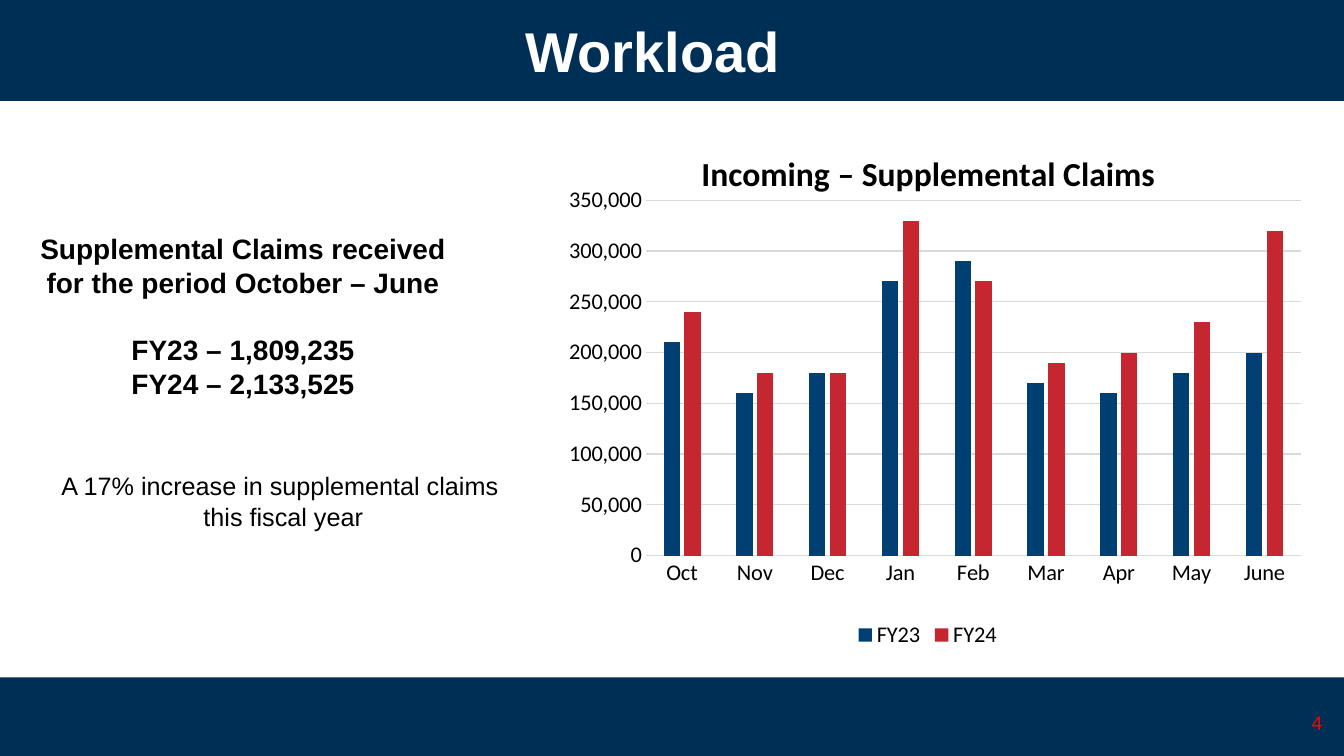
from lxml import etree
from pptx import Presentation
from pptx import util as u
from pptx.chart import data as chart_data
from pptx.dml.color import RGBColor
from pptx.enum import chart as chart_enum, shapes, text
from pptx.oxml import parse_xml
from pptx.oxml.ns import nsdecls, qn

NAVY = RGBColor(0x00, 0x2F, 0x56)
BLUE = RGBColor(0x00, 0x3F, 0x72)
CRIMSON = RGBColor(0xC6, 0x26, 0x30)
RED = RGBColor(0xFF, 0x00, 0x00)
GRAY = RGBColor(0xD9, 0xD9, 0xD9)
BLACK = RGBColor(0x00, 0x00, 0x00)
WHITE = RGBColor(0xFF, 0xFF, 0xFF)

MONTHS = ["Oct", "Nov", "Dec", "Jan", "Feb", "Mar", "Apr", "May", "June"]
CLAIMS = {
    "FY23": (BLUE, [210000, 160000, 180000, 270000, 290000, 170000, 160000, 180000, 200000]),
    "FY24": (CRIMSON, [240000, 180000, 180000, 330000, 270000, 190000, 200000, 230000, 320000]),
}


def inches(box):
    return [u.Inches(value) for value in box]


def format_font(font, color, **values):
    for name, value in values.items():
        setattr(font, name, value)
    font.color.rgb = color


def add_text(slide, box, lines, color, alignment=None, gaps=None, **values):
    """Write one paragraph per line; gaps maps a line index to its space before."""
    frame = slide.shapes.add_textbox(*inches(box)).text_frame
    frame.word_wrap = True
    for index, line in enumerate(lines):
        paragraph = frame.paragraphs[0] if index == 0 else frame.add_paragraph()
        paragraph.text = line
        paragraph.alignment = alignment
        if gaps and index in gaps:
            paragraph.space_before = u.Pt(gaps[index])
        format_font(paragraph.font, color, **values)


def add_title(slide, box):
    title = slide.shapes.title
    title.left, title.top, title.width, title.height = inches(box)
    title.fill.solid()
    title.fill.fore_color.rgb = NAVY
    frame = title.text_frame
    frame.text = "Workload "
    frame.vertical_anchor = text.MSO_ANCHOR.MIDDLE
    paragraph = frame.paragraphs[0]
    paragraph.alignment = text.PP_ALIGN.CENTER
    format_font(paragraph.font, WHITE, name="Arial", size=u.Pt(40), bold=True)


def add_footer(slide, box):
    left, top, width, height = box
    bar = slide.shapes.add_shape(shapes.MSO_SHAPE.RECTANGLE, *inches(box))
    bar.shadow.inherit = False
    bar.fill.solid()
    bar.fill.fore_color.rgb = NAVY
    bar.line.fill.background()
    add_text(slide, (left + width - 0.42, top + 0.27, 0.35, 0.35), ["4"], RED,
             name="Calibri", size=u.Pt(15))


def add_summary(slide, box):
    left, top, width, height = box
    center = text.PP_ALIGN.CENTER
    # Totals by fiscal year
    add_text(slide, (left, top, 4.22, 2.12),
             ["Supplemental Claims received for the period October – June",
              "FY23 – 1,809,235", "FY24 – 2,133,525"],
             BLACK, center, {1: 24}, name="Arial", size=u.Pt(20), bold=True)
    # Change from last year
    add_text(slide, (left + 0.12, top + height - 0.71, width - 0.12, 0.71),
             ["A 17% increase in supplemental claims", " this fiscal year"],
             BLACK, center, name="Arial", size=u.Pt(18))


def set_layout(parent, position, **values):
    """Give a chart part a manual layout, in fractions of the chart."""
    for old in parent.findall(qn("c:layout")):
        parent.remove(old)
    layout = parse_xml(f"<c:layout {nsdecls('c')}><c:manualLayout/></c:layout>")
    for name, value in values.items():
        etree.SubElement(layout[0], qn(f"c:{name}")).set("val", str(value))
    parent.insert(position, layout)


def add_claims_chart(slide, box):
    source = chart_data.CategoryChartData(number_format="#,##0")
    source.categories = MONTHS
    for name, (color, values) in CLAIMS.items():
        source.add_series(name, values)
    chart = slide.shapes.add_chart(
        chart_enum.XL_CHART_TYPE.COLUMN_CLUSTERED, *inches(box), source).chart
    format_font(chart.font, BLACK, name="Calibri", size=u.Pt(16))

    # Title
    chart.has_title = True
    title = chart.chart_title
    title.include_in_layout = False
    title.text_frame.text = "Incoming – Supplemental Claims"
    format_font(title.text_frame.paragraphs[0].runs[0].font, BLACK,
                name="Calibri", size=u.Pt(24), bold=True)
    set_layout(title._element, 1, xMode="edge", yMode="edge", x=0.2, y=0.03)

    # Columns
    plot = chart.plots[0]
    plot.vary_by_categories = False
    plot.gap_width, plot.overlap = 219, -27
    for series in plot.series:
        series.format.fill.solid()
        series.format.fill.fore_color.rgb = CLAIMS[series.name][0]
    set_layout(chart._chartSpace.chart.plotArea, 0, layoutTarget="inner",
               xMode="edge", yMode="edge", x=0.136, y=0.136, w=0.846, h=0.678)

    # Axes
    for axis in (chart.category_axis, chart.value_axis):
        axis.major_tick_mark = chart_enum.XL_TICK_MARK.NONE
        format_font(axis.tick_labels.font, BLACK, name="Calibri", size=u.Pt(16))
    values_axis = chart.value_axis
    values_axis.minimum_scale, values_axis.maximum_scale = 0, 350000
    values_axis.major_unit = 50000
    values_axis.format.line.fill.background()
    for line in (chart.category_axis.format.line, values_axis.major_gridlines.format.line):
        line.color.rgb = GRAY
        line.width = u.Pt(0.75)

    # Legend
    chart.has_legend = True
    chart.legend.position = chart_enum.XL_LEGEND_POSITION.BOTTOM
    chart.legend.include_in_layout = False
    format_font(chart.legend.font, BLACK, name="Calibri", size=u.Pt(16))


def main():
    presentation = Presentation()
    presentation.slide_width, presentation.slide_height = inches((13.33, 7.5))
    slide = presentation.slides.add_slide(presentation.slide_layouts[5])
    add_title(slide, (-0.24, 0, 13.58, 1))
    add_footer(slide, (0, 6.72, 13.33, 0.78))
    add_summary(slide, (0.3, 2.25, 4.83, 3.08))
    add_claims_chart(slide, (5.36, 1.28, 7.68, 5.2))
    presentation.save("out.pptx")


if __name__ == "__main__":
    main()
